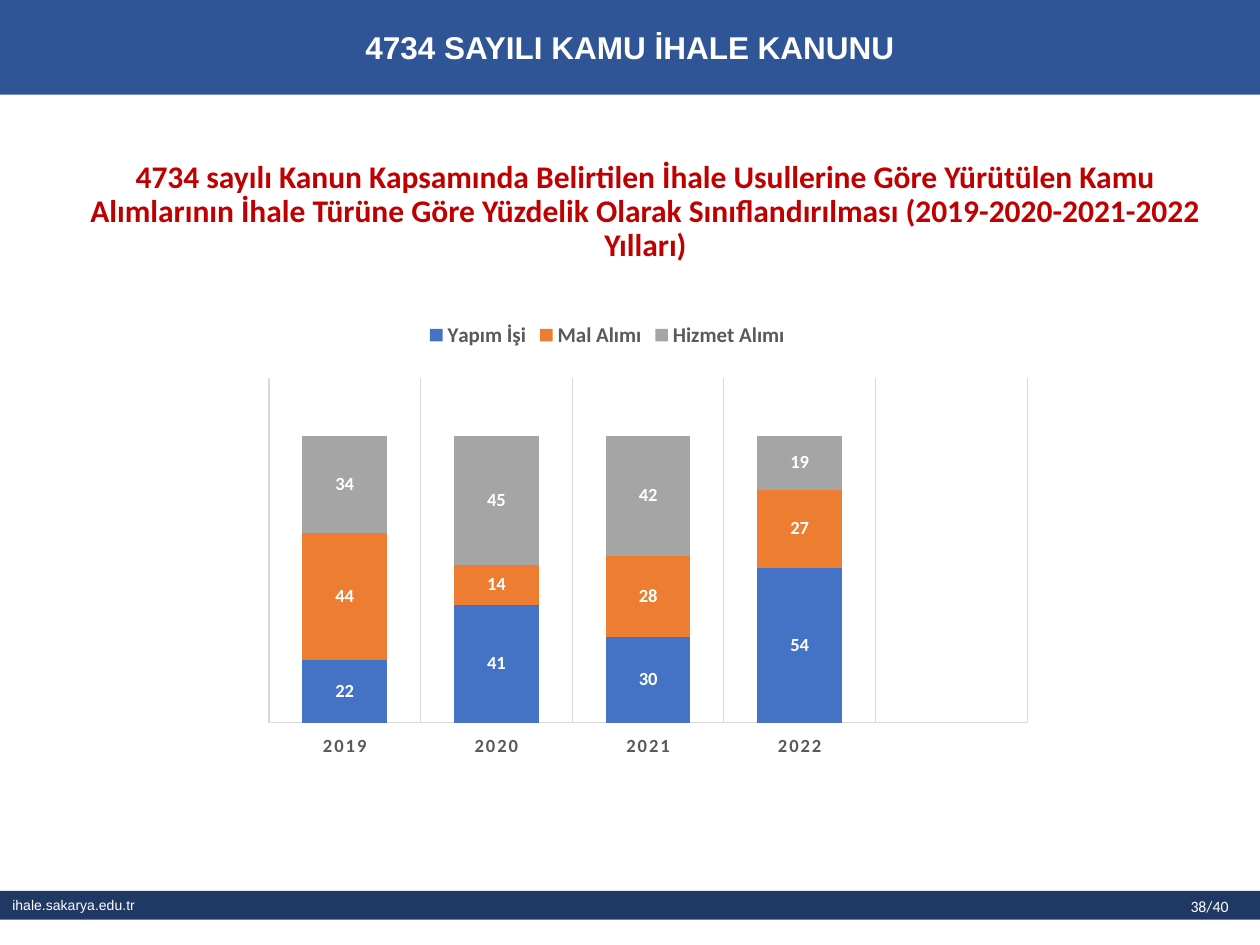
from dataclasses import dataclass

from lxml import etree
from pptx import Presentation
from pptx.chart.data import CategoryChartData
from pptx.dml.color import RGBColor as Rgb
from pptx.enum.chart import XL_CHART_TYPE as ChartType
from pptx.enum.chart import XL_LEGEND_POSITION as LegendPosition
from pptx.enum.chart import XL_TICK_LABEL_POSITION as TickLabel
from pptx.enum.chart import XL_TICK_MARK as TickMark
from pptx.enum.shapes import MSO_SHAPE as Shape
from pptx.enum.text import MSO_ANCHOR as Anchor
from pptx.enum.text import PP_ALIGN as Align
from pptx.oxml.ns import qn
from pptx.util import Cm, Pt


@dataclass(frozen=True)
class Theme:
    header: str = "2F5597"
    footer: str = "203864"
    title: str = "C00000"
    light: str = "FFFFFF"
    grey: str = "595959"
    grid: str = "D9D9D9"
    series: tuple = ("4472C4", "ED7D31", "A5A5A5")
    heading_size: float = 18
    legend_size: float = 12
    label_size: float = 10.6
    page_size: float = 9
    footer_size: float = 8


theme = Theme()


def set_font(font, size, color, name="Calibri", bold=True):
    for key, value in {"size": Pt(size), "name": name, "bold": bold}.items():
        setattr(font, key, value)
    font.color.rgb = Rgb.from_string(color)


def write(shape, text, size, color, align, name="Calibri", bold=True, anchor=Anchor.TOP):
    frame = shape.text_frame
    for key, value in {"word_wrap": True, "vertical_anchor": anchor}.items():
        setattr(frame, key, value)
    para = frame.paragraphs[0]
    para.alignment = align
    span = para.add_run()
    span.text = text
    set_font(span.font, size, color, name, bold)
    return para


deck = Presentation()
deck.slide_width, deck.slide_height = Cm(25.4), Cm(19.05)
page = deck.slides.add_slide(deck.slide_layouts[6])

# Footer and header bands
bands = [
    (17.96, 0.58, theme.footer, "ihale.sakarya.edu.tr", theme.footer_size, Align.LEFT, False),
    (0, 1.91, theme.header, "4734 SAYILI KAMU İHALE KANUNU", theme.heading_size, Align.CENTER, True),
]
for top, height, color, text, size, align, bold in bands:
    band = page.shapes.add_shape(Shape.RECTANGLE, 0, Cm(top), deck.slide_width, Cm(height))
    band.shadow.inherit = False
    band.fill.solid()
    band.fill.fore_color.rgb = Rgb.from_string(color)
    band.line.fill.background()
    write(band, text, size, theme.light, align, "Arial", bold, Anchor.MIDDLE)

# Page number
number_box = page.shapes.add_textbox(Cm(23.75), Cm(17.96), Cm(2.36), Cm(0.64))
write(number_box, "38/40", theme.page_size, theme.light, Align.LEFT, bold=False)

# Title
title_box = page.shapes.add_textbox(Cm(1.37), Cm(3.12), Cm(23.29), Cm(2.06))
title = write(
    title_box,
    "4734 sayılı Kanun Kapsamında Belirtilen İhale Usullerine Göre Yürütülen Kamu "
    "Alımlarının İhale Türüne Göre Yüzdelik Olarak Sınıflandırılması "
    "(2019-2020-2021-2022 Yılları)",
    theme.heading_size, theme.title, Align.CENTER,
)
title.line_spacing = 0.9

# Stacked columns, with an empty fifth category
data = CategoryChartData()
data.categories = ["2019", "2020", "2021", "2022", ""]
data.add_series("Yapım İşi", (22, 41, 30, 54, None))
data.add_series("Mal Alımı", (44, 14, 28, 27, None))
data.add_series("Hizmet Alımı", (34, 45, 42, 19, None))
chart = page.shapes.add_chart(
    ChartType.COLUMN_STACKED, Cm(3.78), Cm(6.22), Cm(16.94), Cm(10.44), data
).chart
chart.has_title = False
chart.font.name, chart.font.size = "Calibri", Pt(10)

plot = chart.plots[0]
for key, value in {"gap_width": 79, "overlap": 100, "vary_by_categories": False}.items():
    setattr(plot, key, value)
for series, color in zip(plot.series, theme.series):
    series.format.fill.solid()
    series.format.fill.fore_color.rgb = Rgb.from_string(color)
    series.data_labels.show_value = True
    set_font(series.data_labels.font, theme.label_size, theme.light)

# Legend
chart.has_legend = True
chart.legend.position = LegendPosition.TOP
chart.legend.include_in_layout = False
set_font(chart.legend.font, theme.legend_size, theme.grey)

# Axes
years, values = chart.category_axis, chart.value_axis
axis_format = {
    "has_major_gridlines": True,
    "major_tick_mark": TickMark.NONE,
    "minor_tick_mark": TickMark.NONE,
    "tick_label_position": TickLabel.LOW,
}
for key, value in axis_format.items():
    setattr(years, key, value)
for line in (years.format.line, years.major_gridlines.format.line):
    line.color.rgb = Rgb.from_string(theme.grid)
    line.width = Pt(0.75)
set_font(years.tick_labels.font, theme.label_size, theme.grey)
for properties in years._element.iter(qn("a:defRPr")):
    properties.set("spc", "120")
value_format = {
    "has_major_gridlines": False,
    "minimum_scale": 0,
    "maximum_scale": 120,
    "visible": False,
}
for key, value in value_format.items():
    setattr(values, key, value)

# Inner plot area as shares of the chart
plot_area = chart._chartSpace.chart.plotArea
for old_layout in plot_area.findall(qn("c:layout")):
    plot_area.remove(old_layout)
layout = etree.Element(qn("c:layout"))
manual = etree.SubElement(layout, qn("c:manualLayout"))
layout_format = {
    "layoutTarget": "inner", "xMode": "edge", "yMode": "edge",
    "x": "0.097", "y": "0.135", "w": "0.903", "h": "0.665",
}
for key, value in layout_format.items():
    etree.SubElement(manual, qn(f"c:{key}")).set("val", value)
plot_area.insert(0, layout)

deck.save("out.pptx")
